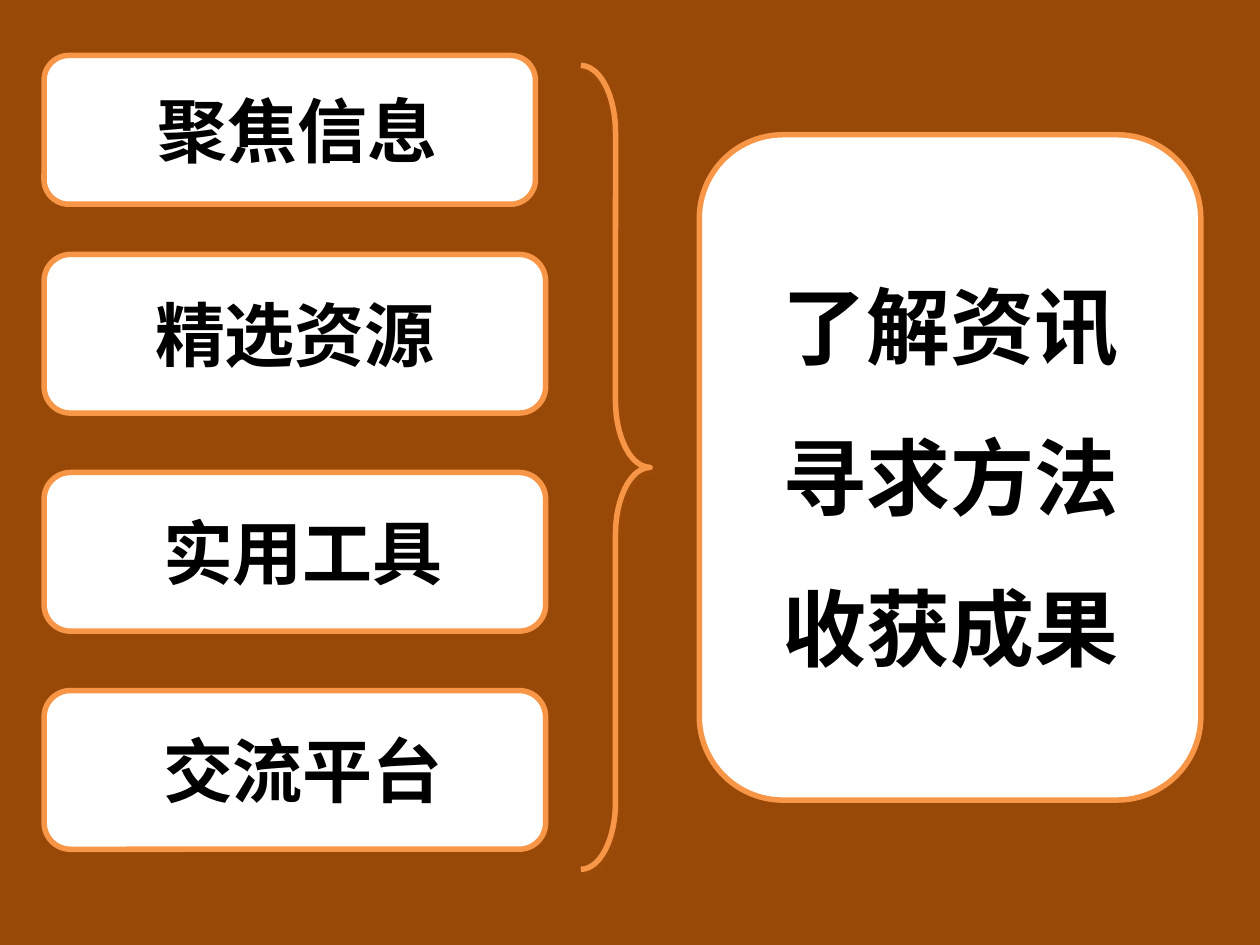
from lxml.etree import fromstring
from pptx import Presentation
from pptx.dml.color import RGBColor
from pptx.enum.shapes import MSO_SHAPE
from pptx.enum.text import MSO_ANCHOR, PP_ALIGN
from pptx.util import Pt

# Content: text and left inset of each box
ITEMS = [("聚焦信息", 16.2), ("精选资源", 7.2), ("实用工具", 16.2), ("交流平台", 16.2)]
GOALS = ["了解资讯", "寻求方法", "收获成果"]

BROWN, ORANGE, WHITE, BLACK = "984807", "F79646", "FFFFFF", "000000"
LEFT, WIDE, HIGH = 25.2, 286.6, 90.7
TOP, STEP = 145.4, 124.6
SHADE = """<a:effectLst xmlns:a="http://schemas.openxmlformats.org/drawingml/2006/main">
<a:outerShdw blurRad="50800" dist="25400" dir="5400000" rotWithShape="0">
<a:srgbClr val="AD560F"><a:alpha val="38000"/></a:srgbClr></a:outerShdw></a:effectLst>"""


def paint(target, color):
    target.solid()
    target.fore_color.rgb = RGBColor.from_string(color)


def outline(kind, *place):
    shape = slide.shapes.add_shape(kind, *map(Pt, place))
    shape.shadow.inherit = False
    paint(shape.line.fill, ORANGE)
    shape.line.width = Pt(3.15)
    return shape


def card(lines, size, *place):
    shape = outline(MSO_SHAPE.ROUNDED_RECTANGLE, *place)
    paint(shape.fill, WHITE)
    frame = shape.text_frame
    frame.word_wrap = True
    frame.vertical_anchor = MSO_ANCHOR.MIDDLE
    frame.text = "\n".join(lines)
    for para in frame.paragraphs:
        para.alignment = PP_ALIGN.CENTER
        font = para.runs[0].font
        font.name, font.size, font.bold = "Calibri", Pt(size), True
        paint(font.fill, BLACK)
    return frame


deck = Presentation()
deck.slide_width, deck.slide_height = Pt(720), Pt(540)
slide = deck.slides.add_slide(deck.slide_layouts[6])
paint(slide.background.fill, BROWN)

# Left column: the first box is a little smaller and higher
for row, (text, inset) in enumerate(ITEMS):
    place = (LEFT, TOP + (row - 1) * STEP, WIDE, HIGH) if row else (LEFT, 31.7, 280.8, 85)
    card([text], 40, *place).margin_left = Pt(inset)

# Brace with a soft shadow
brace = outline(MSO_SHAPE.RIGHT_BRACE, 331.9, 37.4, 39.6, 459.4)
brace.fill.background()
brace.adjustments[0], brace.adjustments[1] = 0.97, 0.5
props = brace.element.spPr
props.replace(props.find("{*}effectLst"), fromstring(SHADE))

# Goals on the right
goals = card(GOALS, 48, 399.6, 77, WIDE, 380.2)
goals.margin_top = Pt(11)
for spot, para in enumerate(goals.paragraphs):
    para.line_spacing = Pt(60)
    para.space_before = Pt(26.3 if spot else 0)

deck.save("out.pptx")
